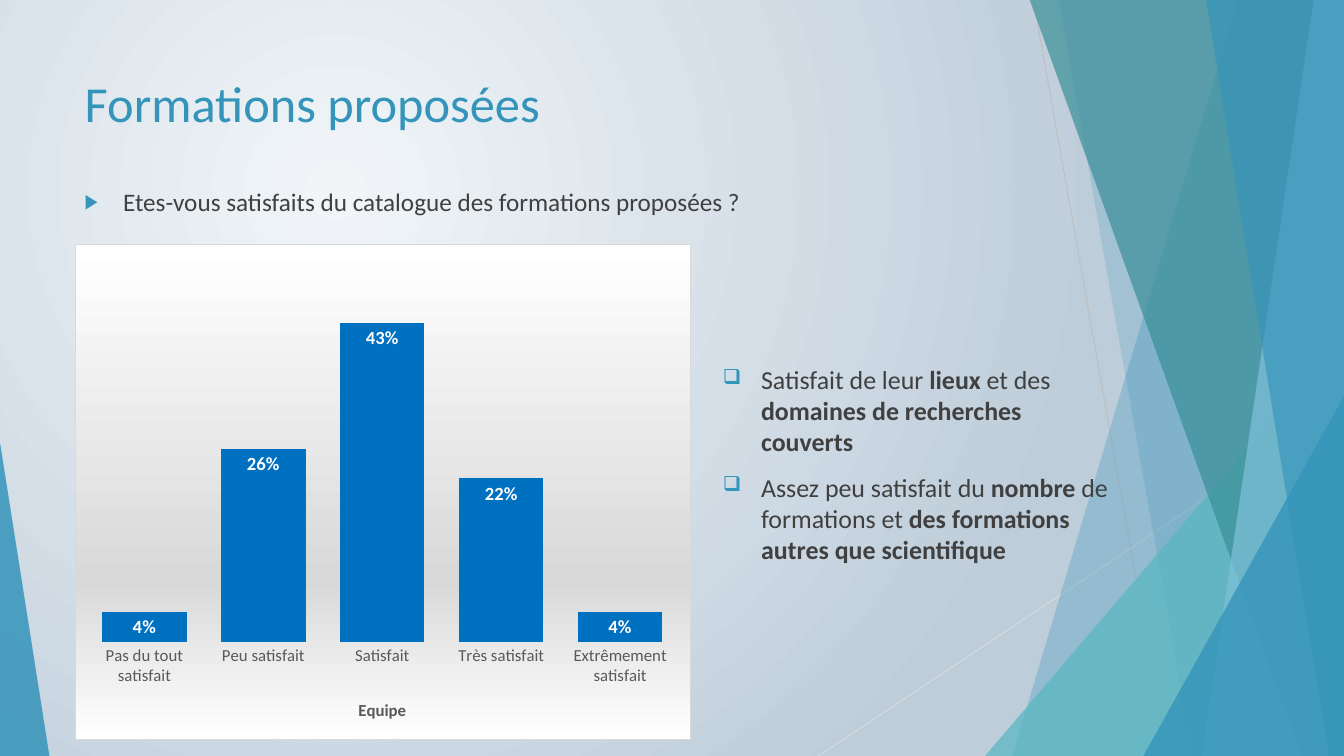
"""Build the slide on satisfaction with the training catalogue."""
from lxml.etree import SubElement
from pptx import Presentation
from pptx.chart.data import CategoryChartData
from pptx.dml.color import RGBColor
from pptx.enum.chart import XL_CHART_TYPE, XL_LABEL_POSITION, XL_TICK_MARK
from pptx.enum.shapes import MSO_CONNECTOR, MSO_SHAPE
from pptx.enum.text import MSO_ANCHOR, MSO_AUTO_SIZE, PP_ALIGN
from pptx.oxml import parse_xml
from pptx.oxml.ns import nsdecls, qn
from pptx.util import Inches, Pt

FONT = "Calibri"
WIDTH, HEIGHT = 13.33, 7.5
COLORS = {
    "accent": "3494BA", "aqua": "58B6C0", "teal": "3A8F98", "sky": "7FC1DB",
    "text": "404040", "axis": "595959", "bar": "0070C0", "white": "FFFFFF",
    "light": "D9D9D9", "gray": "BFBFBF", "center": "F1F5F8", "edge": "BECDDA",
}
RESULTS = {
    "Pas du tout satisfait": 0.04, "Peu satisfait": 0.26, "Satisfait": 0.43,
    "Très satisfait": 0.22, "Extrêmement satisfait": 0.04,
}
COMMENTS = [
    [("Satisfait de leur ", False), ("lieux", True), (" et des ", False),
     ("domaines de recherches couverts", True)],
    [("Assez peu satisfait du ", False), ("nombre ", True),
     ("de formations et ", False), ("des formations autres que scientifique", True)],
]


def rgb(name):
    return RGBColor.from_string(COLORS[name])


def gradient(stops, direction):
    stop_xml = "".join(
        f'<a:gs pos="{position * 1000}"><a:srgbClr val="{COLORS[name]}"/></a:gs>'
        for position, name in stops)
    return f'<a:gradFill rotWithShape="1"><a:gsLst>{stop_xml}</a:gsLst>{direction}</a:gradFill>'


def set_background(slide):
    fill = gradient(
        [(0, "center"), (100, "edge")],
        '<a:path path="circle"><a:fillToRect l="50000" t="50000" r="100000" b="100000"/></a:path>')
    background = parse_xml(
        f'<p:bg {nsdecls("p", "a")}><p:bgPr>{fill}<a:effectLst/></p:bgPr></p:bg>')
    slide.element.cSld.insert(0, background)


def set_glass(shape, color, opacity):
    shape.shadow.inherit = False
    shape.fill.solid()
    shape.fill.fore_color.rgb = rgb(color)
    shape.line.fill.background()
    color_element = shape.element.spPr.find(qn("a:solidFill"))[0]
    SubElement(color_element, qn("a:alpha"), val=str(opacity * 1000))


def add_ray(group, start, end, color):
    points = [Inches(value) for value in (*start, *end)]
    ray = group.shapes.add_connector(MSO_CONNECTOR.STRAIGHT, *points)
    ray.line.color.rgb = rgb(color)
    ray.line.width = Pt(0.75)
    SubElement(ray.element.spPr, qn("a:effectLst"))


def add_band(group, top_left, bottom_left, color, opacity):
    corners = [(top_left, -0.01), (WIDTH, -0.01), (WIDTH, HEIGHT), (bottom_left, HEIGHT)]
    start, *others = [(Inches(x), Inches(y)) for x, y in corners]
    builder = group.shapes.build_freeform(*start)
    builder.add_line_segments(others, close=True)
    set_glass(builder.convert_to_shape(), color, opacity)


def add_corner(group, left, top, width, apex, color, opacity):
    triangle = group.shapes.add_shape(
        MSO_SHAPE.ISOSCELES_TRIANGLE,
        Inches(left), Inches(top), Inches(width), Inches(HEIGHT - top))
    triangle.adjustments[0] = apex
    set_glass(triangle, color, opacity)


def add_decoration(slide):
    group = slide.shapes.add_group_shape()
    add_ray(group, (10.25, 0), (11.58, HEIGHT), "gray")
    add_ray(group, (WIDTH, 4.03), (8.12, HEIGHT), "light")
    add_band(group, 12.28, 10.04, "accent", 30)
    add_band(group, 10.5, 11.83, "accent", 20)
    add_corner(group, 9.77, 3.33, 3.56, 1, "aqua", 72)
    add_band(group, 10.21, 12.91, "teal", 70)
    add_band(group, 13.03, 11.92, "sky", 70)
    add_band(group, 11.96, 13.18, "accent", 65)
    add_corner(group, 11.34, 3.93, 1.99, 1, "accent", 80)
    add_corner(group, 0, 4.39, 0.49, 0, "accent", 85)


def set_font(font, size, color, bold=None):
    font.name = FONT
    font.size = Pt(size)
    font.color.rgb = rgb(color)
    font.bold = bold


def place_placeholder(shape, left, top, width, height):
    shape.left, shape.top = Inches(left), Inches(top)
    shape.width, shape.height = Inches(width), Inches(height)
    shape.text_frame.vertical_anchor = MSO_ANCHOR.TOP
    shape.text_frame.auto_size = MSO_AUTO_SIZE.NONE
    shape.element.getparent().append(shape.element)


def set_bullet(paragraph, symbol, size):
    properties = paragraph._p.get_or_add_pPr()
    properties.set("marL", str(Inches(0.38)))
    properties.set("indent", str(-Inches(0.38)))
    bullet_color = SubElement(properties, qn("a:buClr"))
    SubElement(bullet_color, qn("a:srgbClr"), val=COLORS["accent"])
    SubElement(properties, qn("a:buSzPct"), val="80000")
    SubElement(properties, qn("a:buChar"), char=symbol)
    paragraph.space_before = Pt(10)
    set_font(paragraph.font, size, "text")


def add_headings(slide):
    title, question = slide.placeholders
    place_placeholder(title, 0.74, 0.67, 9.4, 1.44)
    title.text_frame.text = "Formations proposées"
    heading = title.text_frame.paragraphs[0]
    heading.alignment = PP_ALIGN.LEFT
    set_font(heading.font, 36, "accent")
    place_placeholder(question, 0.74, 1.8, 9.4, 0.62)
    question.text_frame.text = "Etes-vous satisfaits du catalogue des formations proposées ?"
    set_bullet(question.text_frame.paragraphs[0], "▶", 18)


def add_comments(slide):
    box = slide.shapes.add_textbox(Inches(7.07), Inches(3.56), Inches(4.02), Inches(2.09))
    frame = box.text_frame
    frame.word_wrap = True
    for index, pieces in enumerate(COMMENTS):
        paragraph = frame.add_paragraph() if index else frame.paragraphs[0]
        set_bullet(paragraph, "❑", 18.5)
        for text, bold in pieces:
            run = paragraph.add_run()
            run.text = text
            run.font.bold = bold


def style_chart_area(chart):
    fill = gradient([(0, "white"), (68, "light"), (100, "white")],
                    '<a:lin ang="5400000" scaled="0"/>')
    area = parse_xml(
        f'<c:spPr {nsdecls("c", "a")}>{fill}<a:ln w="9525"><a:solidFill>'
        f'<a:srgbClr val="{COLORS["light"]}"/></a:solidFill></a:ln></c:spPr>')
    chart_element = chart.element.find(qn("c:chart"))
    chart_element.addnext(area)
    plot_area = chart_element.find(qn("c:plotArea"))
    for old_layout in plot_area.findall(qn("c:layout")):
        plot_area.remove(old_layout)
    settings = {"layoutTarget": "inner", "xMode": "edge", "yMode": "edge",
                "x": 0.016, "y": 0.053, "w": 0.967, "h": 0.75}
    layout = parse_xml(f'<c:layout {nsdecls("c")}><c:manualLayout/></c:layout>')
    for name, value in settings.items():
        SubElement(layout[0], qn(f"c:{name}"), val=str(value))
    plot_area.insert(0, layout)


def add_satisfaction_chart(slide):
    data = CategoryChartData(number_format="0%")
    data.categories = list(RESULTS)
    data.add_series("Series 1", list(RESULTS.values()))
    chart = slide.shapes.add_chart(
        XL_CHART_TYPE.COLUMN_CLUSTERED,
        Inches(0.74), Inches(2.42), Inches(6.11), Inches(4.92), data).chart
    chart.font.name, chart.font.size = FONT, Pt(10)
    chart.has_legend = chart.has_title = False
    category_axis, value_axis = chart.category_axis, chart.value_axis
    category_axis.major_tick_mark = XL_TICK_MARK.NONE
    category_axis.format.line.fill.background()
    set_font(category_axis.tick_labels.font, 12, "axis")
    axis_title = category_axis.axis_title.text_frame
    axis_title.text = "Equipe"
    set_font(axis_title.paragraphs[0].runs[0].font, 12, "axis", True)
    value_axis.minimum_scale, value_axis.maximum_scale = 0, 0.5
    value_axis.has_major_gridlines = value_axis.visible = False
    plot = chart.plots[0]
    plot.gap_width = 41
    plot.vary_by_categories = False
    bars = plot.series[0].format.fill
    bars.solid()
    bars.fore_color.rgb = rgb("bar")
    labels = plot.series[0].data_labels
    labels.show_value = True
    labels.position = XL_LABEL_POSITION.INSIDE_END
    labels.number_format, labels.number_format_is_linked = "0%", False
    set_font(labels.font, 13.3, "white", True)
    style_chart_area(chart)


def main():
    presentation = Presentation()
    presentation.slide_width, presentation.slide_height = Inches(WIDTH), Inches(HEIGHT)
    slide = presentation.slides.add_slide(presentation.slide_layouts[1])
    set_background(slide)
    add_decoration(slide)
    add_headings(slide)
    add_satisfaction_chart(slide)
    add_comments(slide)
    presentation.save("out.pptx")


if __name__ == "__main__":
    main()
